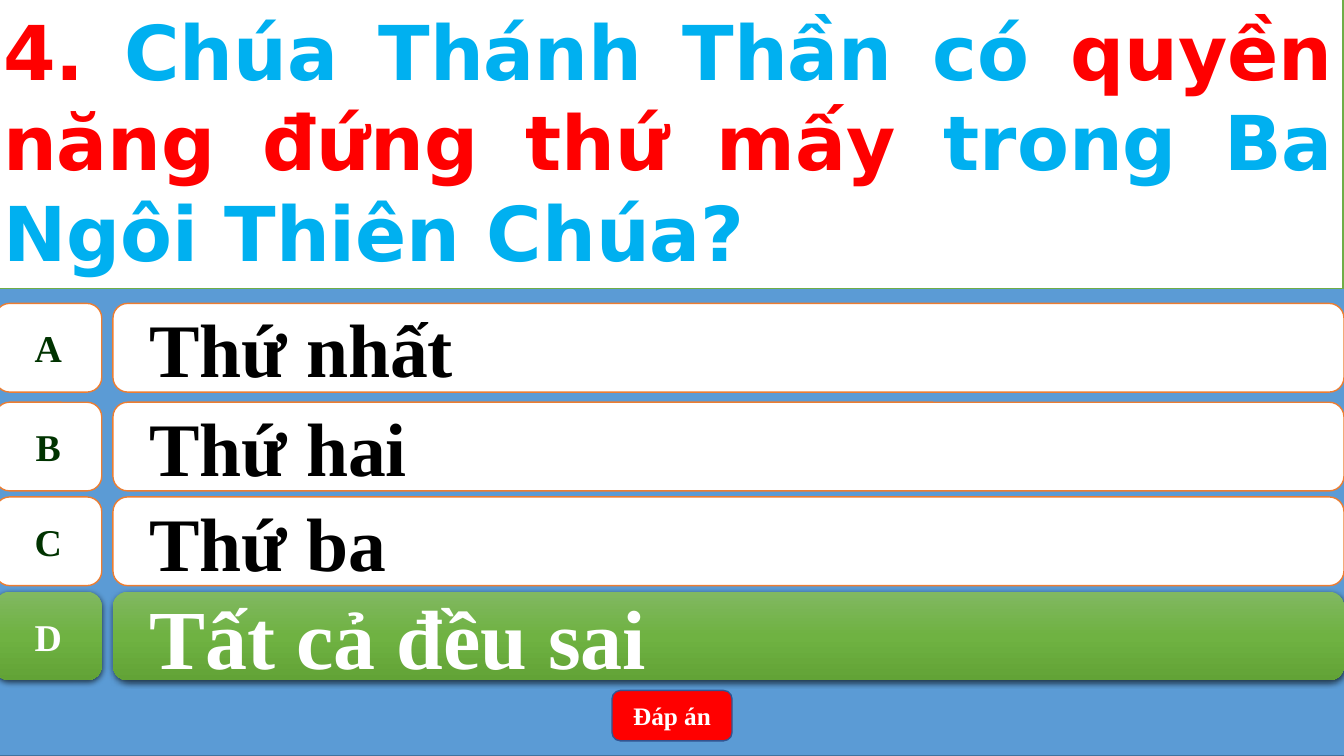
from lxml import etree
from pptx import Presentation
from pptx.dml.color import RGBColor
from pptx.enum.shapes import MSO_SHAPE
from pptx.enum.text import MSO_ANCHOR, MSO_AUTO_SIZE, PP_ALIGN
from pptx.oxml import parse_xml
from pptx.util import Inches, Pt

RECTANGLE, ROUNDED = MSO_SHAPE.RECTANGLE, MSO_SHAPE.ROUNDED_RECTANGLE
BADGE = MSO_SHAPE.FLOWCHART_ALTERNATE_PROCESS
LEFT, CENTER, JUSTIFY = PP_ALIGN.LEFT, PP_ALIGN.CENTER, PP_ALIGN.JUSTIFY
DRAWING = "http://schemas.openxmlformats.org/drawingml/2006/main"

COLORS = {
    "white": "FFFFFF", "black": "000000", "red": "FF0000", "sky": "00B0F0",
    "blue": "5B9BD5", "blue_edge": "43739E", "button_edge": "325491",
    "orange": "ED7D31", "green": "70AD47", "dark_green": "003300",
}
GREEN_STOPS = [(0, "81B861"), (50, "6FB242"), (100, "62A336")]

QUESTION = [
    ("4. ", "red"),
    ("Chúa Thánh Thần có ", "sky"),
    ("quyền năng đứng thứ mấy ", "red"),
    ("trong Ba Ngôi Thiên Chúa?", "sky"),
]
# letter, answer, top, text size, is it the correct one
ANSWERS = [
    ("A", "Thứ nhất", 3.01, 54, False),
    ("B", "Thứ hai", 3.99, 54, False),
    ("C", "Thứ ba", 4.93, 54, False),
    ("D", "Tất cả đều sai", 5.87, 60, True),
]
BUTTON = "Đáp án"

WIDTH, HEIGHT = 13.33, 7.5
EDGE = -0.05
BADGE_WIDTH, ANSWER_LEFT, ROW_HEIGHT = 1.06, 1.12, 0.88


def color(name):
    return RGBColor.from_string(COLORS[name])


def paint(shape, fill, line):
    shape.fill.solid()
    shape.fill.fore_color.rgb = color(fill)
    shape.line.color.rgb = color(line)
    shape.line.width = Pt(1)


def highlight(shape):
    """Give the correct answer its green gradient and soft shadow."""
    shape.line.fill.background()
    stops = "".join(
        f'<a:gs pos="{share * 1000}"><a:srgbClr val="{value}"/></a:gs>'
        for share, value in GREEN_STOPS)
    gradient = parse_xml(
        f'<a:gradFill xmlns:a="{DRAWING}" rotWithShape="1"><a:gsLst>{stops}</a:gsLst>'
        '<a:lin ang="5400000" scaled="0"/></a:gradFill>')
    properties = shape._element.spPr
    properties.find(f"{{{DRAWING}}}prstGeom").addnext(gradient)
    effects = properties.find(f"{{{DRAWING}}}effectLst")
    shadow = etree.SubElement(
        effects, f"{{{DRAWING}}}outerShdw", blurRad=str(Pt(4.5)),
        dist=str(Pt(1.5)), dir="5400000", algn="ctr", rotWithShape="0")
    tint = etree.SubElement(shadow, f"{{{DRAWING}}}srgbClr", val=COLORS["black"])
    etree.SubElement(tint, f"{{{DRAWING}}}alpha", val="63000")


def add_box(page, kind, left, top, width, height):
    box = page.shapes.add_shape(
        kind, Inches(left), Inches(top), Inches(width), Inches(height))
    box.shadow.inherit = False
    return box


def write(box, spans, size, font="Times New Roman", align=CENTER, wrap=True):
    """Fill a box with one bold paragraph of (text, colour) spans."""
    frame = box.text_frame
    frame.auto_size = MSO_AUTO_SIZE.NONE
    frame.word_wrap = wrap
    frame.vertical_anchor = MSO_ANCHOR.MIDDLE
    para = frame.paragraphs[0]
    para.alignment = align
    for text, shade in spans:
        span = para.add_run()
        span.text = text
        span.font.name = font
        span.font.size = Pt(size)
        span.font.bold = True
        span.font.color.rgb = color(shade)
    return para


def add_answer(page, letter, answer, top, size, correct):
    badge = add_box(page, BADGE, EDGE, top, BADGE_WIDTH, ROW_HEIGHT)
    bar = add_box(page, ROUNDED, ANSWER_LEFT, top, WIDTH - ANSWER_LEFT, ROW_HEIGHT)
    for box in (badge, bar):
        if correct:
            highlight(box)
        else:
            paint(box, "white", "orange")
    write(badge, [(letter, "white" if correct else "dark_green")], 27, wrap=False)
    para = write(bar, [(answer, "white" if correct else "black")], size, align=LEFT)
    para.level = 1
    indents = para._p.get_or_add_pPr()
    indents.set("marL", str(Inches(0.5)))
    indents.set("indent", str(Inches(-0.28)))


def add_question(page):
    title = page.shapes.title
    title.left, title.top = Inches(-0.07), Inches(-0.07)
    title.width, title.height = Inches(13.39), Inches(2.93)
    paint(title, "white", "green")
    write(title, QUESTION, 54, font="DejaVu Sans", align=JUSTIFY)
    page.shapes._spTree.append(title._element)  # bring in front of the backdrop


def main():
    deck = Presentation()
    deck.slide_width, deck.slide_height = Inches(WIDTH), Inches(HEIGHT)
    page = deck.slides.add_slide(deck.slide_layouts[5])
    backdrop = add_box(page, RECTANGLE, EDGE, 0, 13.39, HEIGHT)
    paint(backdrop, "blue", "blue_edge")
    for row in ANSWERS:
        add_answer(page, *row)
    button = add_box(page, ROUNDED, 6.07, 6.85, 1.19, 0.5)
    paint(button, "red", "button_edge")
    write(button, [(BUTTON, "white")], 18)
    add_question(page)
    deck.save("out.pptx")


if __name__ == "__main__":
    main()
